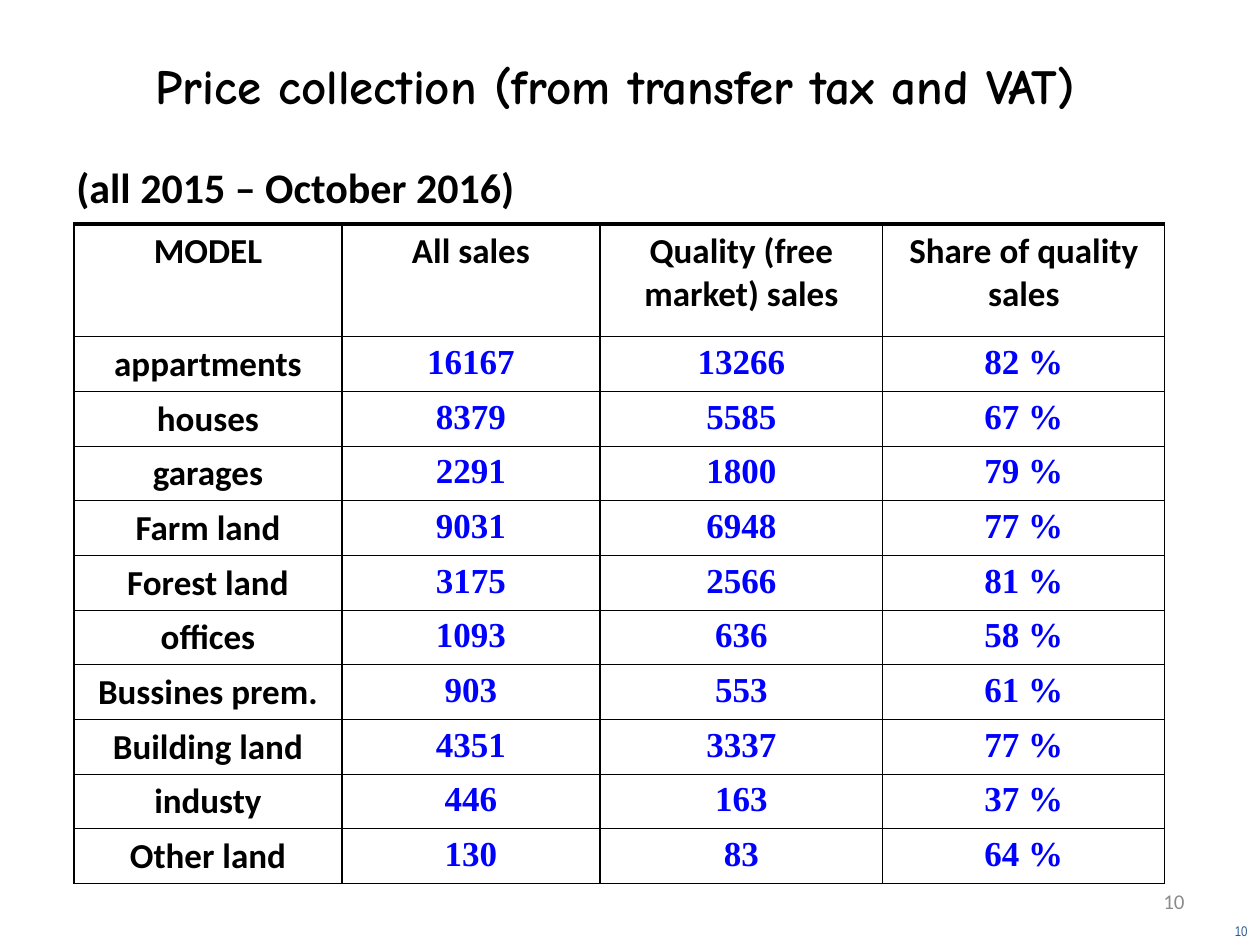
from dataclasses import dataclass

from lxml import etree
from pptx import Presentation
from pptx.dml.color import RGBColor
from pptx.enum.text import MSO_ANCHOR, PP_ALIGN
from pptx.oxml.ns import qn
from pptx.util import Emu, Pt

LEFT, CENTER, RIGHT = PP_ALIGN.LEFT, PP_ALIGN.CENTER, PP_ALIGN.RIGHT
TOP, MIDDLE = MSO_ANCHOR.TOP, MSO_ANCHOR.MIDDLE
PX = 914400 // 126


@dataclass(frozen=True)
class Style:
    font: str
    size: int
    color: str
    bold: bool = True


class Theme:
    title = Style("Comic Neue", 28, "000000")
    subtitle = Style("Calibri", 24, "000000")
    label = Style("Calibri", 20, "000000")
    figure = Style("Times New Roman", 20, "0000FF")
    page_number = Style("Calibri", 12, "8C8C8C", False)
    corner_number = Style("Arial Narrow", 8, "2E5B92", False)
    border = "000000"
    thin, outer, heavy = 0.75, 1, 2


COLUMN_WIDTHS = [268, 258, 283, 282]
HEADER_HEIGHT, ROW_HEIGHT = 113, 52
SALES = [
    ("MODEL", "All sales", "Quality (free market) sales", "Share of quality sales"),
    ("appartments", "16167", "13266", "82 %"),
    ("houses", "8379", "5585", "67 %"),
    ("garages", "2291", "1800", "79 %"),
    ("Farm land", "9031", "6948", "77 %"),
    ("Forest land", "3175", "2566", "81 %"),
    ("offices", "1093", "636", "58 %"),
    ("Bussines prem.", "903", "553", "61 %"),
    ("Building land", "4351", "3337", "77 %"),
    ("industy", "446", "163", "37 %"),
    ("Other land", "130", "83", "64 %"),
]


def px(length):
    return Emu(length * PX)


def write(frame, text, style, align):
    para = frame.paragraphs[0]
    para.alignment = align
    span = para.add_run()
    span.text = text
    span.font.name = style.font
    span.font.size = Pt(style.size)
    span.font.bold = style.bold
    span.font.color.rgb = RGBColor.from_string(style.color)
    return para


def add_text(page, box, text, style, align=LEFT, anchor=TOP):
    frame = page.shapes.add_textbox(*map(px, box)).text_frame
    frame.word_wrap = True
    frame.vertical_anchor = anchor
    return write(frame, text, style, align)


def set_borders(cell, widths):
    properties = cell._tc.get_or_add_tcPr()
    for side, width in widths.items():
        line = etree.SubElement(properties, qn(f"a:ln{side}"), w=str(Pt(width)))
        fill = etree.SubElement(line, qn("a:solidFill"))
        etree.SubElement(fill, qn("a:srgbClr"), val=Theme.border)


def add_heading(page, box):
    left, top, width, height = box
    add_text(page, (left, top, width, 79), "Price collection (from transfer tax and VAT)",
             Theme.title, CENTER, MIDDLE)
    para = add_text(page, (left + 20, top + 110, width, height - 110),
                    "(all 2015 – October 2016)", Theme.subtitle)
    para.space_before = Pt(6)


def add_sales_table(page, box):
    table = page.shapes.add_table(len(SALES), len(COLUMN_WIDTHS), *map(px, box)).table
    table.first_row = table.horz_banding = False
    for column, width in zip(table.columns, COLUMN_WIDTHS):
        column.width = px(width)
    for r, values in enumerate(SALES):
        table.rows[r].height = px(ROW_HEIGHT if r else HEADER_HEIGHT)
        for c, value in enumerate(values):
            cell = table.cell(r, c)
            write(cell.text_frame, value, Theme.figure if r and c else Theme.label, CENTER)
            # Borders come before the fill in the cell properties
            set_borders(cell, {
                "L": Theme.thin if c else Theme.outer,
                "R": Theme.thin,
                "T": Theme.thin if r else Theme.heavy,
                "B": Theme.thin,
            })
            cell.fill.background()


def add_page_numbers(page, box):
    left, top, width, height = box
    add_text(page, (left, top, 294, 50), "10", Theme.page_number, RIGHT, MIDDLE)
    add_text(page, (left + width - 137, top + height - 29, 137, 29), "10",
             Theme.corner_number, RIGHT)


def main():
    deck = Presentation()
    deck.slide_width, deck.slide_height = px(1260), px(945)
    page = deck.slides.add_slide(deck.slide_layouts[6])
    add_page_numbers(page, (903, 876, 357, 69))
    add_heading(page, (44, 45, 1142, 173))
    add_sales_table(page, (74, 224, sum(COLUMN_WIDTHS), 660))
    deck.save("out.pptx")


if __name__ == "__main__":
    main()
